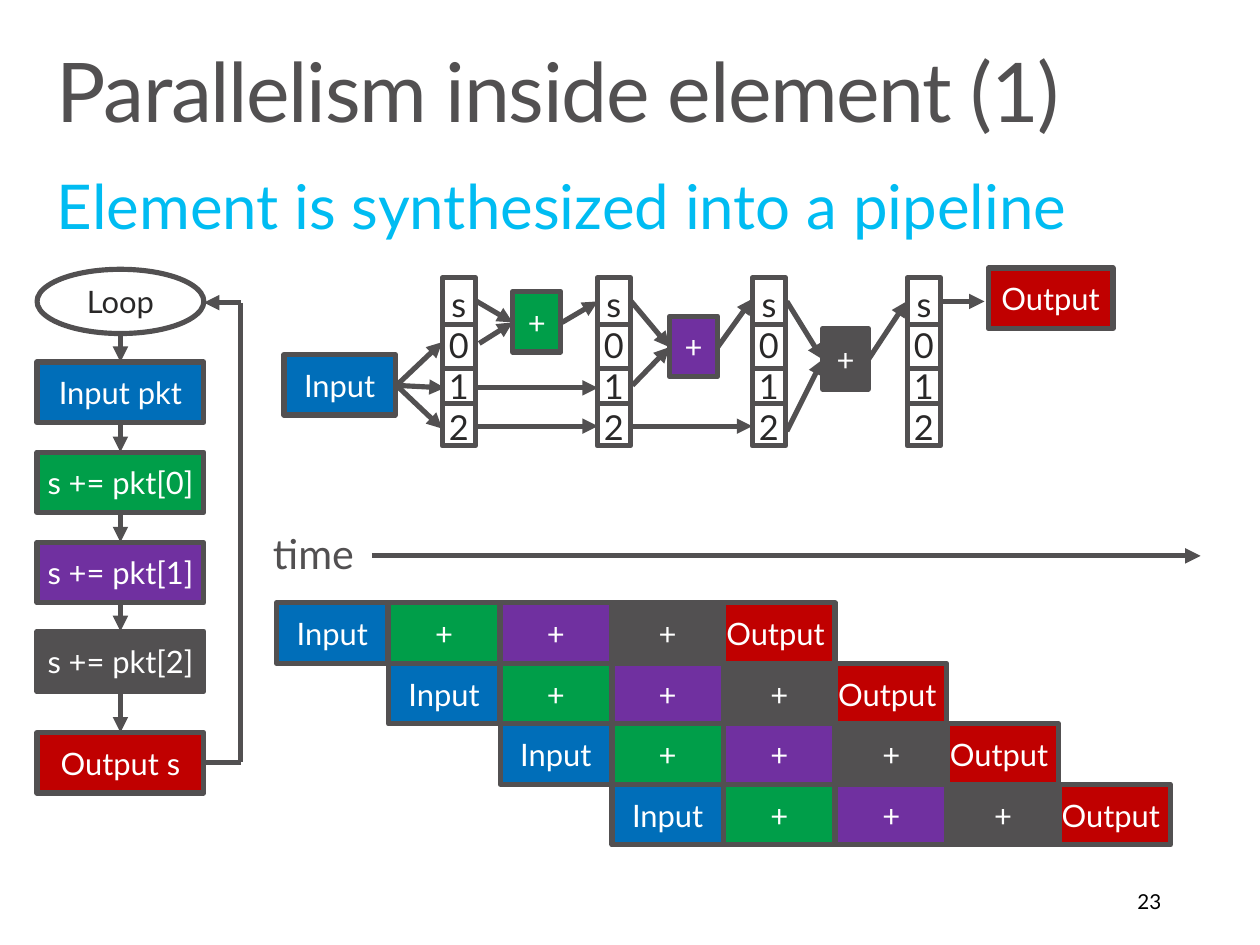
"""Build the slide on parallelism inside a packet-processing element."""
from dataclasses import dataclass

from lxml import etree
from pptx import Presentation
from pptx.dml.color import RGBColor
from pptx.enum.shapes import MSO_CONNECTOR as Conn, MSO_SHAPE as Shape
from pptx.enum.text import MSO_ANCHOR as Anchor, PP_ALIGN as Align
from pptx.oxml.ns import qn
from pptx.util import Inches, Pt

BLUE, GREEN, PURPLE, RED = "006EB9", "009E49", "7030A0", "C00000"
GRAY, CYAN, INK, WHITE, BLACK = "525051", "00BCF2", "292828", "FFFFFF", "000000"
BOX_H = 0.49


@dataclass
class Box:
    left: float
    top: float
    width: float
    height: float
    text: str
    fill: str
    color: str = WHITE
    size: int = 18
    shape: Shape = Shape.RECTANGLE
    anchor: Anchor = Anchor.MIDDLE


@dataclass
class Label:
    left: float
    top: float
    width: float
    height: float
    text: str
    size: int
    color: str
    inset: tuple[float, float] = (0.16, 0.1)
    wrap: bool = True
    anchor: Anchor = Anchor.TOP
    align: Align = Align.LEFT
    spacing: float = 0.9
    tracking: int = 0


@dataclass
class Link:
    x1: float
    y1: float
    x2: float
    y2: float
    arrow: bool = True


def rgb(value: str) -> RGBColor:
    """Turn a hex string into a colour."""
    return RGBColor.from_string(value)


def apply(target: object, values: dict) -> None:
    """Set each named attribute on the target."""
    for name, value in values.items():
        setattr(target, name, value)


def write(tf, item: Box | Label, inset: tuple[float, float], align: Align,
          spacing: float = 1.0, wrap: bool = True, tracking: int = 0) -> None:
    """Write the item's lines into a text frame."""
    x, y = map(Inches, inset)
    apply(tf, dict(margin_left=x, margin_right=x, margin_top=y, margin_bottom=y,
                   vertical_anchor=item.anchor, word_wrap=wrap))
    for i, line in enumerate(item.text.split("\n")):
        p = tf.add_paragraph() if i else tf.paragraphs[0]
        apply(p, dict(alignment=align, line_spacing=spacing))
        r = p.add_run()
        r.text = line
        apply(r.font, dict(name="Lato", size=Pt(item.size)))
        r.font.color.rgb = rgb(item.color)
        if tracking:
            r._r.get_or_add_rPr().set("spc", str(tracking))


def draw_box(s, box: Box) -> None:
    """Draw a filled, outlined shape with centred text."""
    sp = s.shapes.add_shape(box.shape, *map(Inches, (box.left, box.top, box.width, box.height)))
    sp.shadow.inherit = False
    sp.fill.solid()
    sp.fill.fore_color.rgb = rgb(box.fill)
    sp.line.color.rgb = rgb(GRAY)
    sp.line.width = Pt(3)
    write(sp.text_frame, box, (0, 0.04), Align.CENTER)


def draw_label(s, label: Label) -> None:
    """Draw a free-standing text box."""
    tb = s.shapes.add_textbox(*map(Inches, (label.left, label.top, label.width, label.height)))
    write(tb.text_frame, label, label.inset, label.align, label.spacing, label.wrap, label.tracking)


def draw_link(s, link: Link) -> None:
    """Draw a straight line, with an arrowhead if asked."""
    c = s.shapes.add_connector(Conn.STRAIGHT, *map(Inches, (link.x1, link.y1, link.x2, link.y2)))
    c.line.color.rgb = rgb(GRAY)
    c.line.width = Pt(3)
    sp_pr = c._element.spPr
    if link.arrow:
        etree.SubElement(sp_pr.find(qn("a:ln")), qn("a:tailEnd"), type="triangle")
    etree.SubElement(sp_pr, qn("a:effectLst"))


def draw_loop(s) -> None:
    """Draw the loop flowchart on the left."""
    left, width = 0.3, 1.35
    mid, right, back = left + width / 2, left + width, 1.95
    steps = [Box(left, 2.18, width, 0.52, "Loop", WHITE, INK, shape=Shape.OVAL)]
    steps += [Box(left, top, width, BOX_H, text, fill) for top, text, fill in (
        (2.93, "Input pkt", BLUE), (3.66, "s += pkt[0]", GREEN), (4.39, "s += pkt[1]", PURPLE),
        (5.11, "s += pkt[2]", GRAY), (5.93, "Output s", RED))]
    for step in steps:
        draw_box(s, step)
    for a, b in zip(steps, steps[1:]):
        draw_link(s, Link(mid, a.top + a.height, mid, b.top))
    for link in (Link(right, 6.17, back, 6.17, False), Link(back, 6.17, back, 2.45, False),
                 Link(back, 2.45, right, 2.45)):
        draw_link(s, link)


def draw_pipeline(s) -> None:
    """Draw the pipeline stages, registers and data flow."""
    for stage in (Box(2.3, 2.87, 0.9, BOX_H, "Input", BLUE),
                  Box(4.15, 2.36, 0.39, BOX_H, "+", GREEN),
                  Box(5.42, 2.56, 0.39, BOX_H, "+", PURPLE),
                  Box(6.66, 2.66, 0.37, BOX_H, "+", GRAY),
                  Box(8, 2.17, 1.01, BOX_H, "Output", RED)):
        draw_box(s, stage)
    for i in range(4):
        left = 3.58 + 1.255 * i
        draw_box(s, Box(left, 2.25, 0.27, 1.36, "s\n0\n1\n2", WHITE, INK, 20, anchor=Anchor.TOP))
        for y in (2.63, 2.98, 3.27):
            draw_link(s, Link(left, y, left + 0.26, y, False))
    for ends in ((3.21, 3.12, 3.58, 2.77), (3.21, 3.12, 3.6, 3.14), (3.21, 3.12, 3.58, 3.47),
                 (3.86, 2.44, 4.15, 2.61), (3.88, 2.78, 4.15, 2.61), (4.55, 2.61, 4.84, 2.44),
                 (3.85, 3.14, 4.84, 3.14), (3.86, 3.45, 4.84, 3.45),
                 (5.11, 2.44, 5.42, 2.81), (5.12, 3.12, 5.42, 2.81), (5.81, 2.81, 6.09, 2.42),
                 (5.12, 3.45, 6.09, 3.45), (6.37, 2.44, 6.66, 2.91), (6.37, 3.49, 6.66, 2.91),
                 (7.03, 2.91, 7.34, 2.44), (7.61, 2.44, 7.97, 2.44)):
        draw_link(s, Link(*ends))


def draw_timeline(s) -> None:
    """Draw the time axis and the staggered packets."""
    draw_link(s, Link(3.01, 4.5, 9.72, 4.5))
    stages = (("Input", BLUE), ("+", GREEN), ("+", PURPLE), ("+", GRAY), ("Output ", RED))
    for row in range(4):
        for col, (text, fill) in enumerate(stages, start=row):
            draw_box(s, Box(2.24 + 0.905 * col, 4.88 + BOX_H * row, 0.9, BOX_H, text, fill))


def main() -> None:
    """Build and save the slide."""
    prs = Presentation()
    apply(prs, dict(slide_width=Inches(10.2), slide_height=Inches(7.65)))
    s = prs.slides.add_slide(prs.slide_layouts[6])
    for label in (
            Label(0.3, 0.32, 9.6, 1, "Parallelism inside element (1)", 48, GRAY, tracking=-80),
            Label(0.3, 1.33, 9.6, 0.75, "Element is synthesized into a pipeline", 36, CYAN),
            Label(2.01, 4.16, 1.06, 0.69, "time", 24, GRAY, (0.2, 0.16), wrap=False),
            Label(7.2, 7.09, 2.3, 0.41, "23", 12, BLACK, (0.1, 0.05),
                  anchor=Anchor.MIDDLE, align=Align.RIGHT, spacing=1.0)):
        draw_label(s, label)
    draw_loop(s)
    draw_pipeline(s)
    draw_timeline(s)
    prs.save("out.pptx")


if __name__ == "__main__":
    main()
